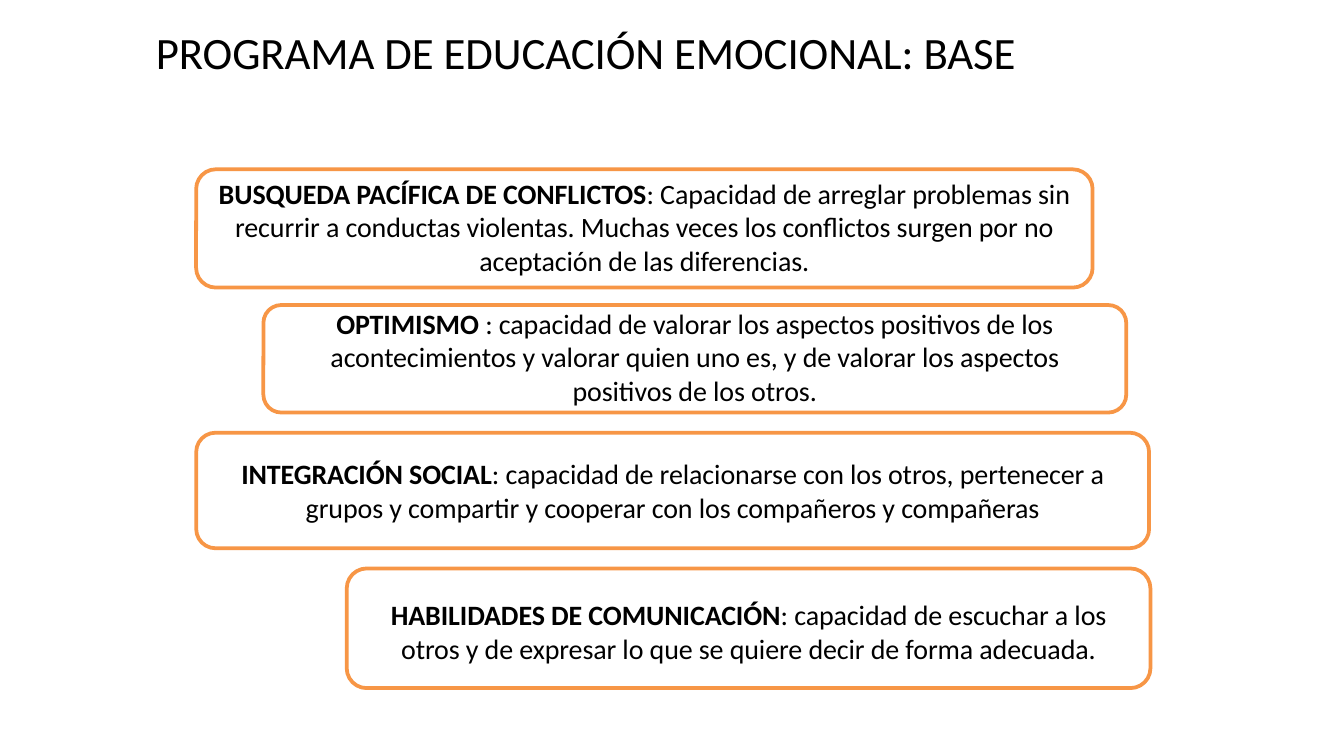
import pptx
import pptx.util
import pptx.dml.color
import pptx.enum.shapes
import pptx.enum.text

Inches, Pt = pptx.util.Inches, pptx.util.Pt
ALIGN = pptx.enum.text.PP_ALIGN
MIDDLE = pptx.enum.text.MSO_ANCHOR.MIDDLE

# Content
TITLE = "PROGRAMA DE EDUCACIÓN EMOCIONAL: BASE"
# term, definition, (left, top, width, height), (side, top, bottom) insets; inches
CARDS = [
    ("BUSQUEDA PACÍFICA DE CONFLICTOS",
     ": Capacidad de arreglar problemas sin recurrir a conductas violentas. "
     "Muchas veces los conflictos surgen por no aceptación de las diferencias.",
     (1.46, 1.26, 6.67, 0.88), (0.1, 0, 0.03)),
    ("OPTIMISMO",
     " : capacidad de valorar los aspectos positivos de los acontecimientos y "
     "valorar quien uno es, y de valorar los aspectos positivos de los otros.",
     (1.96, 2.27, 6.42, 0.8), (0.3, 0, 0.03)),
    ("INTEGRACIÓN SOCIAL",
     ": capacidad de relacionarse con los otros, pertenecer a grupos y "
     "compartir y cooperar con los compañeros y compañeras",
     (1.46, 3.22, 7.09, 0.86), (0.2, 0, 0)),
    ("HABILIDADES DE COMUNICACIÓN",
     ": capacidad de escuchar a los otros y de expresar lo que se quiere "
     "decir de forma adecuada.",
     (2.58, 4.23, 5.98, 0.89), (0.2, 0.05, 0)),
]
COLORS = {"text": "000000", "border": "F79646"}
FONT = "Calibri"
TRACKING = "-5"  # hundredths of a point


def color(name):
    return pptx.dml.color.RGBColor.from_string(COLORS[name])


def format_text(frame, size, alignment, insets=(0, 0, 0)):
    side, top, bottom = map(Inches, insets)
    frame.word_wrap = True
    frame.auto_size = pptx.enum.text.MSO_AUTO_SIZE.NONE
    frame.vertical_anchor = MIDDLE
    frame.margin_left = frame.margin_right = side
    frame.margin_top, frame.margin_bottom = top, bottom
    para = frame.paragraphs[0]
    para.alignment = alignment
    para.font.name = FONT
    para.font.size = Pt(size)
    para.font.color.rgb = color("text")
    for span in para.runs:
        span._r.get_or_add_rPr().set("spc", TRACKING)


# Widescreen page, 16:9
deck = pptx.Presentation()
deck.slide_width = Inches(10)
deck.slide_height = deck.slide_width * 9 // 16
page = deck.slides.add_slide(deck.slide_layouts[5])

# Title
title = page.shapes.title
title.left, title.top = Inches(1.16), Inches(0.18)
title.width, title.height = Inches(7.09), Inches(0.41)
title.text_frame.text = TITLE
format_text(title.text_frame, 24, ALIGN.LEFT)

# Definition cards
for term, definition, place, insets in CARDS:
    card = page.shapes.add_shape(
        pptx.enum.shapes.MSO_SHAPE.ROUNDED_RECTANGLE, *map(Inches, place))
    card.shadow.inherit = False
    card.fill.background()
    card.line.color.rgb = color("border")
    card.line.width = Pt(2)

    para = card.text_frame.paragraphs[0]
    for text, bold in ((term, True), (definition, False)):
        span = para.add_run()
        span.text = text
        span.font.bold = bold
    format_text(card.text_frame, 15, ALIGN.CENTER, insets)

deck.save("out.pptx")
